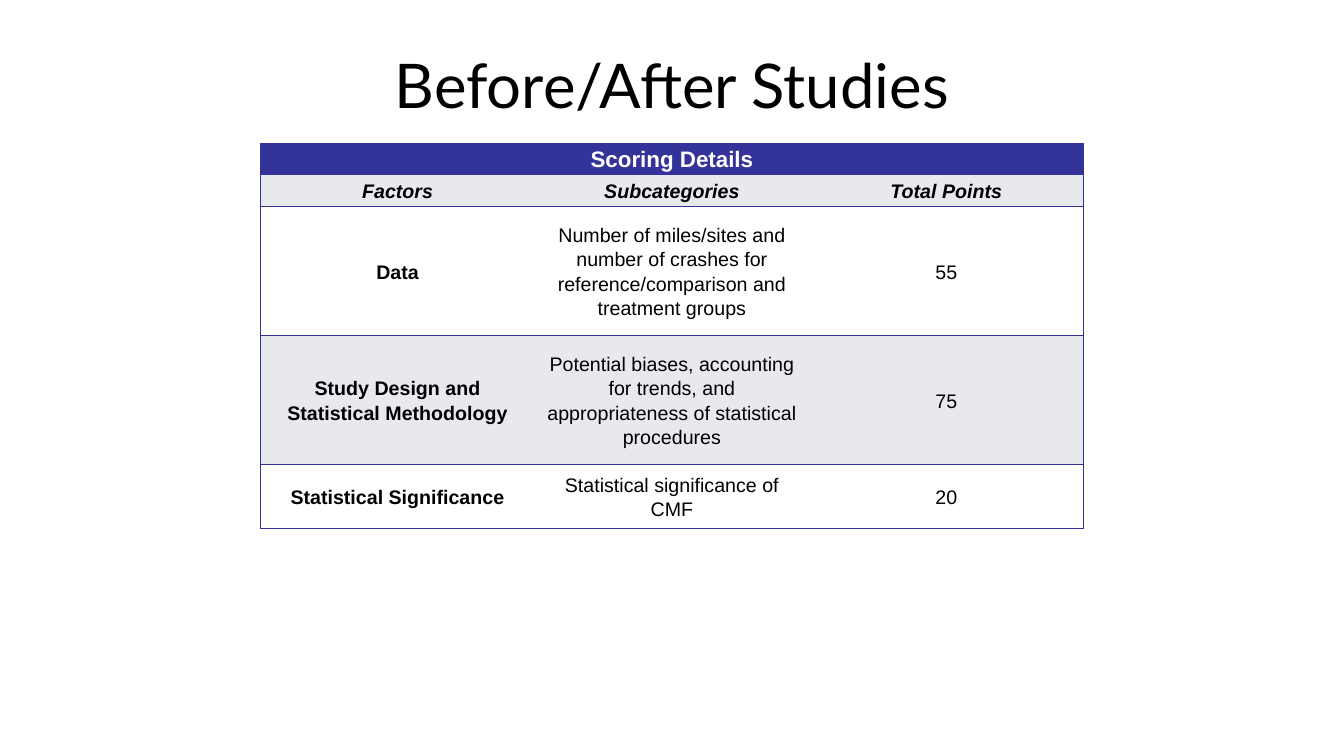
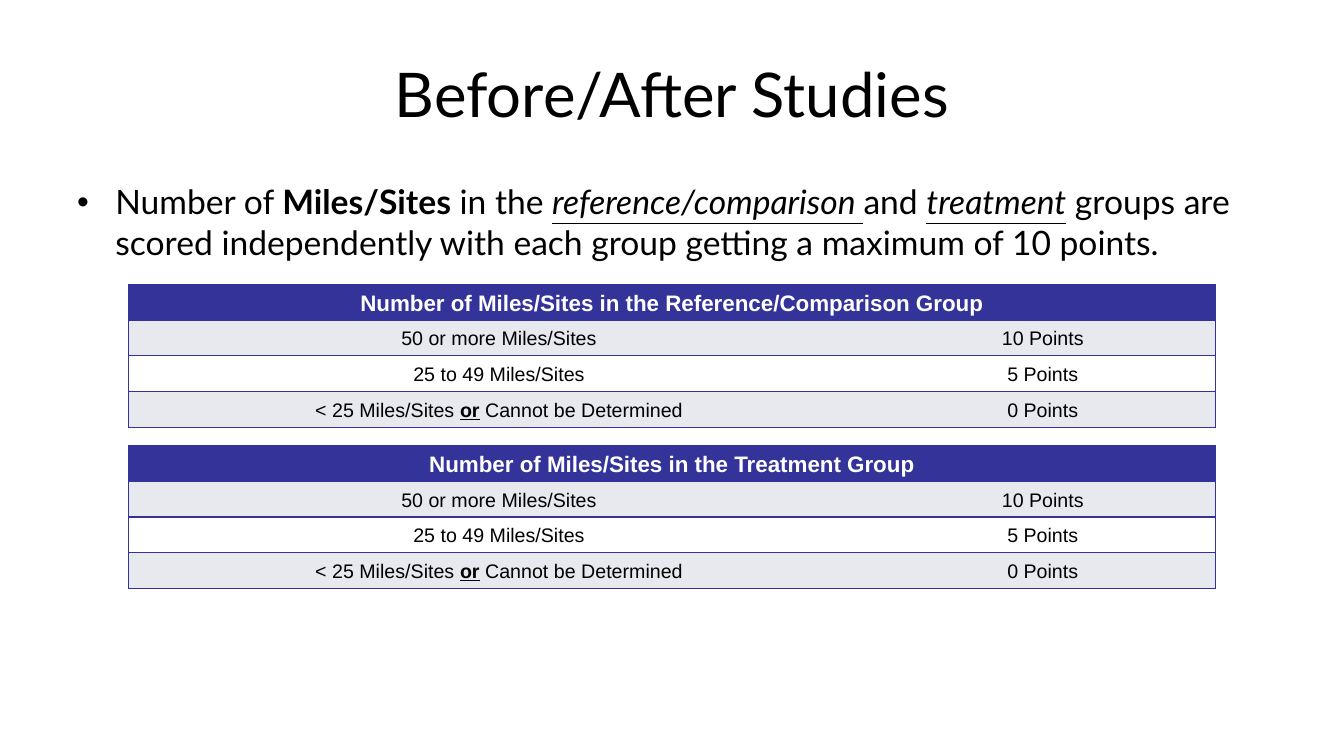
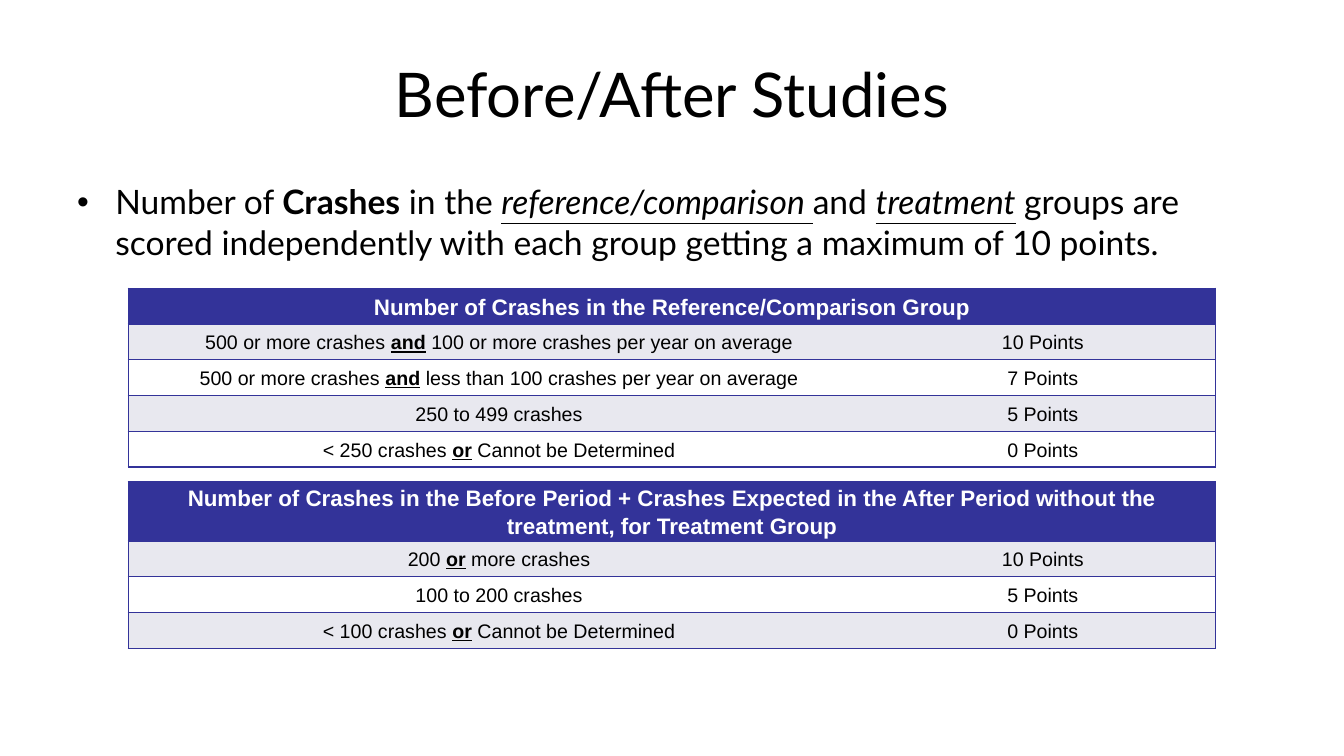
from dataclasses import dataclass
from typing import NamedTuple

from lxml import etree
from pptx import Presentation
from pptx.dml.color import RGBColor
from pptx.enum.text import MSO_ANCHOR, PP_ALIGN
from pptx.oxml.ns import qn
from pptx.util import Inches, Pt

CENTER, LEFT = PP_ALIGN.CENTER, PP_ALIGN.LEFT
MIDDLE, TOP = MSO_ANCHOR.MIDDLE, MSO_ANCHOR.TOP

PAGE_WIDTH, PAGE_HEIGHT = Inches(13.33), Inches(7.5)
COLORS = {"text": "000000", "header": "333399", "header_text": "FFFFFF",
          "band": "E8E8EF", "plain": "FFFFFF"}
PLAIN_TABLE_STYLE = "{2D5ABB26-0587-4C30-8999-92F81FD0307C}"

TITLE = {"name": "Lato", "size": Pt(44)}
BODY = {"name": "Lato", "size": Pt(24)}
HEADER = {"name": "Arial", "size": Pt(16), "bold": True}
CELL = {"name": "Arial", "size": Pt(14)}
BOLD = {"bold": True}
BOLD_ITALIC = {"bold": True, "italic": True}
STRESSED = {"bold": True, "underline": True}
TERM = {"italic": True, "underline": True}


class Span(NamedTuple):
    text: str
    style: dict = {}


class Area(NamedTuple):
    """A rectangle in percent of the slide's width and height."""
    left: float
    top: float
    width: float
    height: float


@dataclass
class ScoreTable:
    """Top, width and row heights in percent of the slide; columns in percent of the table."""
    top: float
    width: float
    columns: list[float]
    row_heights: list[float]
    header: str
    rows: list[list[list[Span]]]
    first_fill: str = "band"


TITLE_AREA = Area(5, 4, 90, 16.67)
BODY_AREA = Area(5, 23.33, 90, 66)
OVERVIEW_TITLE_AREA = Area(15, 4.4, 70, 13.33)
POINTS_WIDTH, POINTS_COLUMNS = 80.92, [68.2, 31.8]
POINTS_ROW, TWO_LINE_ROW = 4.73, 7.33


def across(percent: float) -> int:
    return round(PAGE_WIDTH * percent / 100)


def down(percent: float) -> int:
    return round(PAGE_HEIGHT * percent / 100)


def write_spans(para, spans: list[Span], base: dict, color: str) -> None:
    for span in spans:
        run = para.add_run()
        run.text = span.text
        for name, value in {**base, **span.style}.items():
            setattr(run.font, name, value)
        run.font.color.rgb = RGBColor.from_string(COLORS[color])


def add_text(page, area: Area, spans: list[Span], base: dict, anchor, align):
    box = page.shapes.add_textbox(across(area.left), down(area.top),
                                  across(area.width), down(area.height))
    frame = box.text_frame
    frame.word_wrap = True
    frame.vertical_anchor = anchor
    para = frame.paragraphs[0]
    para.alignment = align
    write_spans(para, spans, base, "text")
    return para


def add_title(page, area: Area = TITLE_AREA) -> None:
    add_text(page, area, [Span("Before/After Studies")], TITLE, MIDDLE, CENTER)


def add_bullet(page, spans: list[Span]) -> None:
    para = add_text(page, BODY_AREA, spans, BODY, TOP, LEFT)
    properties = para._p.get_or_add_pPr()
    properties.set("marL", str(Inches(0.38)))
    properties.set("indent", str(-Inches(0.38)))
    etree.SubElement(properties, qn("a:buFont"), typeface="Arial")
    etree.SubElement(properties, qn("a:buChar"), char="•")


def set_borders(cell, visible: str) -> None:
    """Draw the edges named in visible (L, R, T, B) and clear the others."""
    properties = cell._tc.get_or_add_tcPr()
    for edge in "LRTB":
        line = etree.SubElement(properties, qn(f"a:ln{edge}"), w=str(Pt(1)))
        if edge in visible:
            fill = etree.SubElement(line, qn("a:solidFill"))
            etree.SubElement(fill, qn("a:srgbClr"), val=COLORS["header"])
        else:
            etree.SubElement(line, qn("a:noFill"))


def fill_cell(cell, spans: list[Span], base: dict, color: str, fill: str, edges: str) -> None:
    set_borders(cell, edges)
    cell.fill.solid()
    cell.fill.fore_color.rgb = RGBColor.from_string(COLORS[fill])
    cell.vertical_anchor = MIDDLE
    cell.margin_left = cell.margin_right = Inches(0.07)
    cell.margin_top = cell.margin_bottom = 0
    para = cell.text_frame.paragraphs[0]
    para.alignment = CENTER
    para.line_spacing = 1.1
    para.space_after = Pt(6)
    write_spans(para, spans, base, color)


def add_score_table(page, content: ScoreTable) -> None:
    width = across(content.width)
    last = len(content.columns) - 1
    frame = page.shapes.add_table(
        len(content.row_heights), last + 1, (PAGE_WIDTH - width) // 2,
        down(content.top), width, down(sum(content.row_heights)))
    table = frame.table
    table.first_row = table.horz_banding = False
    frame._element.find(".//" + qn("a:tableStyleId")).text = PLAIN_TABLE_STYLE
    for column, share in zip(table.columns, content.columns):
        column.width = round(width * share / 100)
    for row, height in zip(table.rows, content.row_heights):
        row.height = down(height)

    table.cell(0, 0).merge(table.cell(0, last))
    fill_cell(table.cell(0, 0), [Span(content.header)], HEADER,
              "header_text", "header", "LRTB")
    fills = ["band", "plain"]
    start = fills.index(content.first_fill)
    for row_index, row in enumerate(content.rows):
        fill = fills[(start + row_index) % 2]
        for column_index, spans in enumerate(row):
            edges = "TB" + "L" * (column_index == 0) + "R" * (column_index == last)
            fill_cell(table.cell(row_index + 1, column_index), spans, CELL,
                      "text", fill, edges)


def factor_row(factor: str, subcategory: str, points: str) -> list[list[Span]]:
    return [[Span(factor, BOLD)], [Span(subcategory)], [Span(points)]]


def points_row(points: int, before: str, stressed: str = "", after: str = "") -> list[list[Span]]:
    spans = [Span(before)]
    if stressed:
        spans += [Span(stressed, STRESSED), Span(after)]
    return [spans, [Span(f"{points} Points")]]


def points_table(top: float, header: str, rows: list, header_height: float = POINTS_ROW) -> ScoreTable:
    return ScoreTable(top, POINTS_WIDTH, POINTS_COLUMNS,
                      [header_height] + [POINTS_ROW] * len(rows), header, rows)


def undetermined_row(limit: str) -> list[list[Span]]:
    return points_row(0, f"< {limit} ", "or", " Cannot be Determined")


def add_points_page(deck, measure: str, tables: list[ScoreTable]) -> None:
    page = deck.slides.add_slide(deck.slide_layouts[6])
    add_title(page)
    add_bullet(page, [
        Span("Number of "), Span(measure, BOLD), Span(" in the "),
        Span("reference/comparison ", TERM), Span("and "), Span("treatment", TERM),
        Span(" groups are scored independently with each group getting a maximum of 10 points."),
    ])
    for content in tables:
        add_score_table(page, content)


def add_overview_page(deck) -> None:
    page = deck.slides.add_slide(deck.slide_layouts[6])
    add_title(page, OVERVIEW_TITLE_AREA)
    labels = ["Factors", "Subcategories", "Total Points"]
    add_score_table(page, ScoreTable(
        18.93, 61.25, [100 / 3] * 3, [4.2, 4.2, 17.07, 17.07, 8.47], "Scoring Details", [
            [[Span(label, BOLD_ITALIC)] for label in labels],
            factor_row("Data", "Number of miles/sites and number of crashes for "
                       "reference/comparison and treatment groups", "55"),
            factor_row("Study Design and Statistical Methodology",
                       "Potential biases, accounting for trends, and "
                       "appropriateness of statistical procedures", "75"),
            factor_row("Statistical Significance", "Statistical significance of CMF", "20"),
        ]))


def main() -> None:
    deck = Presentation()
    deck.slide_width, deck.slide_height = PAGE_WIDTH, PAGE_HEIGHT
    add_overview_page(deck)

    site_rows = [
        points_row(10, "50 or more Miles/Sites"),
        points_row(5, "25 to 49 Miles/Sites"),
        undetermined_row("25 Miles/Sites"),
    ]
    add_points_page(deck, "Miles/Sites", [
        points_table(top, f"Number of Miles/Sites in the {group} Group", site_rows)
        for top, group in [(37.6, "Reference/Comparison"), (58.93, "Treatment")]
    ])

    add_points_page(deck, "Crashes", [
        points_table(38.13, "Number of Crashes in the Reference/Comparison Group", [
            points_row(10, "500 or more crashes ", "and",
                       " 100 or more crashes per year on average"),
            points_row(7, "500 or more crashes ", "and",
                       " less than 100 crashes per year on average"),
            points_row(5, "250 to 499 crashes"),
            undetermined_row("250 crashes"),
        ]),
        points_table(63.73, "Number of Crashes in the Before Period + Crashes Expected in the "
                     "After Period without the treatment, for Treatment Group", [
                         points_row(10, "200 ", "or", " more crashes"),
                         points_row(5, "100 to 200 crashes"),
                         undetermined_row("100 crashes"),
                     ], TWO_LINE_ROW),
    ])
    deck.save("out.pptx")


if __name__ == "__main__":
    main()
